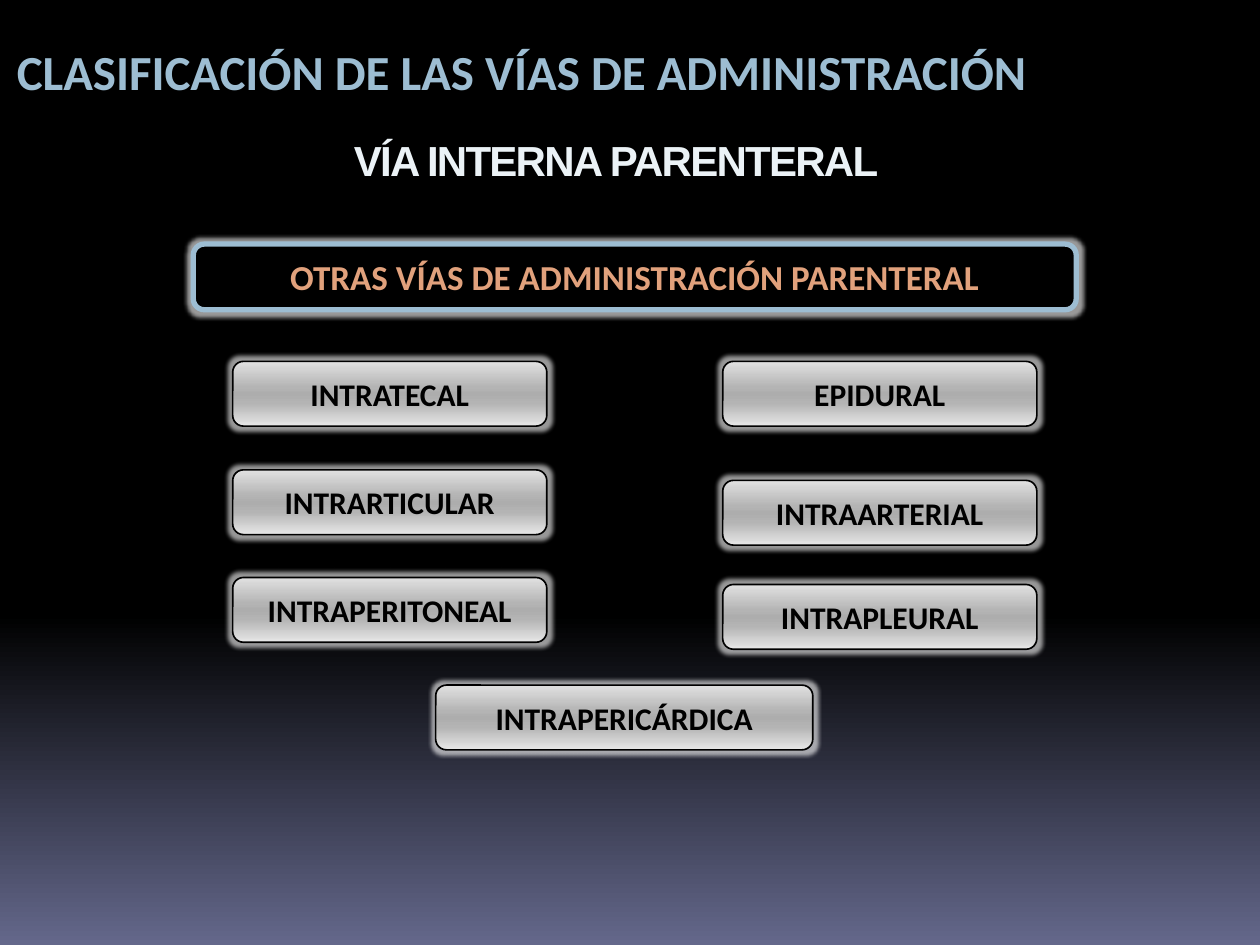
from lxml.etree import SubElement
from pptx import Presentation
from pptx.dml.color import RGBColor
from pptx.enum.shapes import MSO_SHAPE as SHAPE
from pptx.enum.text import MSO_ANCHOR as ANCHOR, PP_ALIGN as ALIGN
from pptx.oxml.ns import qn
from pptx.util import Pt

COLORS = {
    "black": "000000", "dusk": "64688B", "title": "EBF2F6",
    "sky": "9DBDD2", "peach": "E1A17C", "glow": "FFFFFF",
    "silver": "E1E1E1", "gray": "B4B4B4", "dark_gray": "ADADAD", "light": "E7E7E7",
}
NIGHT = [(0, "black"), (65, "black"), (100, "dusk")]
METAL = [(0, "silver"), (40, "gray"), (50, "dark_gray"), (65, "gray"), (100, "light")]


def rgb(name):
    return RGBColor.from_string(COLORS[name])


def write(tf, text, size, color, font="Calibri", align=ALIGN.CENTER,
          anchor=ANCHOR.MIDDLE, wrap=False, spacing=None):
    tf.word_wrap = wrap
    tf.vertical_anchor = anchor
    p = tf.paragraphs[0]
    p.alignment = align
    r = p.add_run()
    r.text = text
    r.font.size, r.font.name, r.font.bold = Pt(size), font, True
    r.font.color.rgb = rgb(color)
    if spacing is not None:
        r._r.get_or_add_rPr().set("spc", str(spacing * 100))


def set_gradient(fill, element, stops):
    fill.gradient()
    fill.gradient_angle = 270
    stop_list = element.find(".//" + qn("a:gsLst"))
    for stop in list(stop_list):
        stop_list.remove(stop)
    for pos, color in stops:
        gs = SubElement(stop_list, qn("a:gs"), pos=str(pos * 1000))
        SubElement(gs, qn("a:srgbClr"), val=COLORS[color])


def add_glow(sp, radius=5, opacity=60):
    sp.shadow.inherit = False
    effects = sp._element.spPr.find(qn("a:effectLst"))
    glow = SubElement(effects, qn("a:glow"), rad=str(Pt(radius)))
    color = SubElement(glow, qn("a:srgbClr"), val=COLORS["glow"])
    SubElement(color, qn("a:alpha"), val=str(opacity * 1000))


def add_box(slide, box, text, size=18, color="black", line="black", weight=0.94, stops=METAL):
    sp = slide.shapes.add_shape(SHAPE.ROUNDED_RECTANGLE, *map(Pt, box))
    sp.adjustments[0] = 0.167
    if stops:
        set_gradient(sp.fill, sp._element.spPr, stops)
    else:
        sp.fill.solid()
        sp.fill.fore_color.rgb = rgb("black")
    sp.line.color.rgb = rgb(line)
    sp.line.width = Pt(weight)
    add_glow(sp)
    write(sp.text_frame, text, size, color)


def add_title(slide, box, text):
    sp = slide.shapes.title
    sp.left, sp.top, sp.width, sp.height = map(Pt, box)
    write(sp.text_frame, text, 24, "title", font="Arial", anchor=ANCHOR.TOP,
          wrap=True, spacing=-1)


def add_header(slide, box, text):
    sp = slide.shapes.add_textbox(*map(Pt, box))
    write(sp.text_frame, text, 28, "sky", align=ALIGN.LEFT, anchor=ANCHOR.TOP)


def add_column(slide, left, routes):
    for top, text in routes:
        add_box(slide, (left, top, 179.5, 37), text)


def main():
    prs = Presentation()
    prs.slide_width, prs.slide_height = Pt(720), Pt(540)
    slide = prs.slides.add_slide(prs.slide_layouts[5])
    set_gradient(slide.background.fill, slide._element, NIGHT)

    add_title(slide, (28, 73.5, 648, 53.5), "VÍA INTERNA PARENTERAL")
    add_box(slide, (110.5, 139.5, 504.5, 37.5), "OTRAS VÍAS DE ADMINISTRACIÓN PARENTERAL",
            size=20, color="peach", line="sky", weight=3, stops=None)
    add_column(slide, 133, [(206.5, "INTRATECAL"), (268.5, "INTRARTICULAR"),
                            (330, "INTRAPERITONEAL")])
    add_column(slide, 413, [(206.5, "EPIDURAL"), (274.5, "INTRAARTERIAL"),
                            (334, "INTRAPLEURAL")])
    add_box(slide, (249, 391.5, 215.5, 37), "INTRAPERICÁRDICA")
    add_header(slide, (2.5, 20, 605.5, 41), "CLASIFICACIÓN DE LAS VÍAS DE ADMINISTRACIÓN")

    prs.save("out.pptx")


if __name__ == "__main__":
    main()
